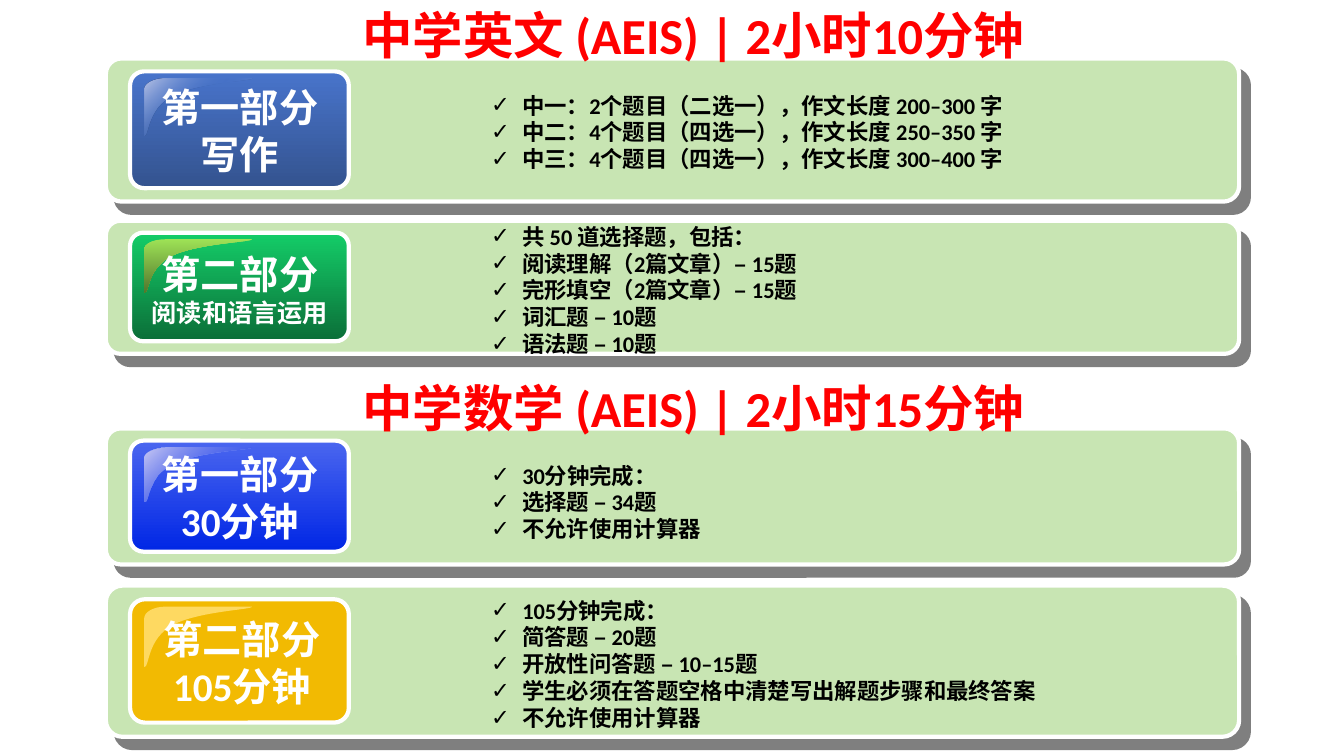
from dataclasses import dataclass

from lxml import etree
from pptx import Presentation
from pptx.dml.color import RGBColor
from pptx.enum.shapes import MSO_SHAPE
from pptx.enum.text import MSO_ANCHOR, MSO_AUTO_SIZE, PP_ALIGN
from pptx.oxml.ns import qn
from pptx.util import Inches, Pt

ROUNDED = MSO_SHAPE.ROUNDED_RECTANGLE
TOP = MSO_ANCHOR.TOP
FIT_SHAPE = MSO_AUTO_SIZE.SHAPE_TO_FIT_TEXT
LEFT, CENTER = PP_ALIGN.LEFT, PP_ALIGN.CENTER
COMPARISON_LAYOUT = 4  # a title and four body placeholders

COLORS = {
    "panel": "C8E5B3", "white": "FFFFFF", "black": "000000", "heading": "FF0000",
    "steel": "4874CB", "steel_dark": "34538F", "steel_light": "BAC4E5",
    "green": "14CD68", "green_dark": "0B6E38", "lime": "9EE256", "olive": "52762D",
    "violet": "4A66EF", "blue": "0026E5", "lilac": "C9C9F4",
    "amber": "F2BA02", "amber_light": "FED961",
}

# Highlight outline: start point, then Bezier curves or straight ends, as fractions
GLOSS_START = (0.195, 0)
GLOSS_SEGMENTS = [
    [(0.085, 0), (0, 0.09), (0, 0.19)],
    [(0, 0.98)],
    [(0.05, 1), (0.02, 0.52), (0.27, 0.29)],
    [(0.52, 0.07), (1, 0.05), (0.99, 0)],
]


@dataclass
class Stop:
    position: int
    color: str
    opacity: int = 100


@dataclass
class Paint:
    stops: list[Stop]
    angle: int = 90


@dataclass
class Section:
    panel_top: float
    panel_height: float
    badge: Paint
    gloss: Paint
    label_top: float
    label: list[tuple[str, int]]
    list_top: float
    items: list[str]
    label_width: float = 2.08


@dataclass
class Heading:
    top: float
    text: str


HEADINGS = [
    Heading(-0.01, "中学英文 (AEIS) | 2小时10分钟"),
    Heading(3.69, "中学数学 (AEIS) | 2小时15分钟"),
]

SECTIONS = [
    Section(0.58, 1.42, Paint([Stop(0, "steel"), Stop(100, "steel_dark")]),
            Paint([Stop(0, "steel_light"), Stop(50, "steel", 0), Stop(100, "steel_light")], 45),
            0.78, [("第一部分", 28), ("写作", 28)], 0.86,
            ["中一：2个题目（二选一），作文长度 200–300 字",
             "中二：4个题目（四选一），作文长度 250–350 字",
             "中三：4个题目（四选一），作文长度 300–400 字"]),
    Section(2.19, 1.32, Paint([Stop(0, "green"), Stop(100, "green_dark")]),
            Paint([Stop(0, "lime"), Stop(100, "olive")]),
            2.43, [("第二部分", 28), ("阅读和语言运用", 18)], 2.16,
            ["共 50 道选择题，包括：", "阅读理解（2篇文章）– 15题",
             "完形填空（2篇文章）– 15题", "词汇题 – 10题", "语法题 – 10题"]),
    Section(4.25, 1.35, Paint([Stop(0, "violet"), Stop(100, "blue")]),
            Paint([Stop(0, "lilac"), Stop(100, "blue", 0)], 45),
            4.42, [("第一部分", 28), ("30分钟", 28)], 4.53,
            ["30分钟完成：", "选择题 – 34题", "不允许使用计算器"]),
    Section(5.81, 1.5, Paint([Stop(0, "amber")]), Paint([Stop(0, "amber_light")]),
            6.05, [("第二部分", 28), ("105分钟", 28)], 5.87,
            ["105分钟完成：", "简答题 – 20题", "开放性问答题 – 10–15题",
             "学生必须在答题空格中清楚写出解题步骤和最终答案", "不允许使用计算器"], 2.12),
]


def rgb(name: str) -> RGBColor:
    return RGBColor.from_string(COLORS[name])


def add_color(parent, name: str, opacity: int) -> None:
    color = etree.SubElement(parent, qn("a:srgbClr"), val=COLORS[name])
    if opacity < 100:
        etree.SubElement(color, qn("a:alpha"), val=str(opacity * 1000))


def paint(shape, fill: Paint) -> None:
    """Fill with one colour, or with a gradient when there are several stops."""
    if len(fill.stops) == 1:
        shape.fill.solid()
        shape.fill.fore_color.rgb = rgb(fill.stops[0].color)
        return
    shape.fill.gradient()
    gradient = shape.element.spPr.find(qn("a:gradFill"))
    for child in list(gradient):
        gradient.remove(child)
    stop_list = etree.SubElement(gradient, qn("a:gsLst"))
    for stop in fill.stops:
        node = etree.SubElement(stop_list, qn("a:gs"), pos=str(stop.position * 1000))
        add_color(node, stop.color, stop.opacity)
    etree.SubElement(gradient, qn("a:lin"), ang=str(fill.angle * 60000), scaled="0")


def add_card(slide, left: float, top: float, width: float, height: float,
             rounding: float, fill: Paint):
    card = slide.shapes.add_shape(ROUNDED, Inches(left), Inches(top), Inches(width), Inches(height))
    card.adjustments[0] = rounding
    card.shadow.inherit = False
    paint(card, fill)
    card.line.color.rgb = rgb("white")
    card.line.width = Pt(3)
    return card


def add_hard_shadow(shape) -> None:
    effects = shape.element.spPr.find(qn("a:effectLst"))
    shadow = etree.SubElement(effects, qn("a:outerShdw"), blurRad="0", dist=str(Pt(10.6)),
                              dir=str(49 * 60000), algn="tl", rotWithShape="0")
    add_color(shadow, "black", 50)


def add_gloss(slide, left: float, top: float, width: float, height: float, fill: Paint) -> None:
    points = [GLOSS_START] + [point for segment in GLOSS_SEGMENTS for point in segment]
    start, *rest = [(Inches(left + x * width), Inches(top + y * height)) for x, y in points]
    outline = slide.shapes.build_freeform(*start)
    outline.add_line_segments(rest, close=True)
    gloss = outline.convert_to_shape()
    # Join each run of three control points into one curve
    lines = iter(list(gloss.element.iter(qn("a:lnTo"))))
    for segment in GLOSS_SEGMENTS:
        steps = [next(lines) for _ in segment]
        if len(steps) == 3:
            curve = etree.Element(qn("a:cubicBezTo"))
            steps[0].addprevious(curve)
            for step in steps:
                curve.append(step[0])
                step.getparent().remove(step)
    gloss.shadow.inherit = False
    paint(gloss, fill)
    gloss.line.fill.background()


def write(box, left: float, top: float, width: float, height: float,
          lines: list[tuple[str, int]], color: str, align, margin: float = 0,
          indent: float = 0, bullet: str = "") -> None:
    """Place a text holder, bring it to the front and fill it."""
    box.element.getparent().append(box.element)
    box.left, box.top, box.width, box.height = map(Inches, (left, top, width, height))
    frame = box.text_frame
    frame_format = {"word_wrap": True, "auto_size": FIT_SHAPE, "vertical_anchor": TOP}
    for key, value in frame_format.items():
        setattr(frame, key, value)
    frame.text = "\n".join(text for text, _ in lines)
    for paragraph, (_, size) in zip(frame.paragraphs, lines):
        paragraph.alignment = align
        paragraph.space_before = Pt(0)
        font_format = {"name": "Calibri", "size": Pt(size), "bold": True}
        font = paragraph.runs[0].font
        for key, value in font_format.items():
            setattr(font, key, value)
        font.color.rgb = rgb(color)
        properties = paragraph._p.get_or_add_pPr()
        properties.set("marL", str(Inches(margin)))
        properties.set("indent", str(Inches(indent)))
        if bullet:
            etree.SubElement(properties, qn("a:buChar"), char=bullet)


def add_section(slide, section: Section, body) -> None:
    # Green panel with its shadow
    panel = add_card(slide, 1.05, section.panel_top, 11.24, section.panel_height,
                     0.11, Paint([Stop(0, "panel")]))
    add_hard_shadow(panel)
    # Coloured badge with highlight and label
    badge_top = section.panel_top + 0.09 * section.panel_height
    badge_height = 0.816 * section.panel_height
    add_card(slide, 1.29, badge_top, 2.17, badge_height, 0.12, section.badge)
    add_gloss(slide, 1.43, badge_top + 0.06 * badge_height, 1.08, badge_height / 2, section.gloss)
    label = slide.shapes.add_textbox(0, 0, 0, 0)
    label_height = 0.1 + sum(size for _, size in section.label) / 60
    write(label, 1.34, section.label_top, section.label_width, label_height,
          section.label, "white", CENTER)
    # Checklist
    write(body, 4.77, section.list_top, 7.52, 0.1 + 0.27 * len(section.items),
          [(item, 16) for item in section.items], "black", LEFT, 0.31, -0.31, "✓")


def main() -> None:
    deck = Presentation()
    deck.slide_width, deck.slide_height = Inches(13.33), Inches(7.5)
    slide = deck.slides.add_slide(deck.slide_layouts[COMPARISON_LAYOUT])
    title, *bodies = list(slide.placeholders)
    for section, body in zip(SECTIONS, bodies):
        add_section(slide, section, body)
    # Exam headings
    for heading, box in zip(HEADINGS, (title, slide.shapes.add_textbox(0, 0, 0, 0))):
        write(box, 0, heading.top, 13.33, 0.71, [(heading.text, 36)], "heading", CENTER, indent=0.42)
    deck.save("out.pptx")


if __name__ == "__main__":
    main()
